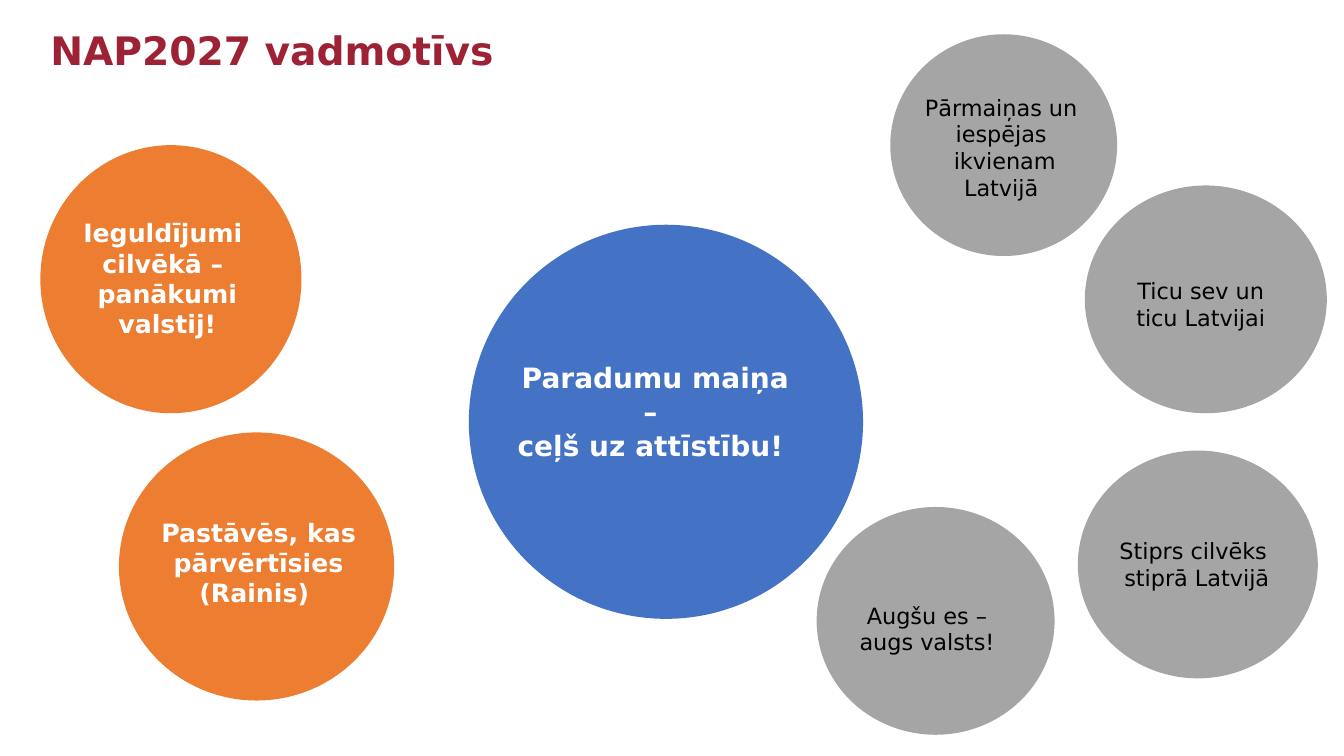
from pptx import Presentation
from pptx.dml.color import RGBColor
from pptx.enum.shapes import MSO_SHAPE
from pptx.enum.text import MSO_ANCHOR, PP_ALIGN
from pptx.util import Emu, Pt

PX = 9144
FONT = "DejaVu Sans"
COLORS = {
    "title": "9D2235",
    "blue": "4472C4",
    "orange": "ED7D31",
    "grey": "A5A5A5",
    "white": "FFFFFF",
    "black": "000000",
}
STYLES = {
    "blue": {"size": 20, "color": "white", "bold": True},
    "orange": {"size": 18, "color": "white", "bold": True},
    "grey": {"size": 16, "color": "black", "bold": False},
}
BUBBLES = [
    ("blue", (465, 223, 391, 391), (500, 353, 300, 145),
     ["Paradumu maiņa – ", "ceļš uz attīstību! "]),
    ("orange", (40, 144, 259, 266), (56, 211, 220, 131),
     ["Ieguldījumi ", "cilvēkā – ", "panākumi valstij!"]),
    ("orange", (118, 429, 273, 266), (132, 508, 249, 115),
     ["Pastāvēs, kas pārvērtīsies (Rainis) "]),
    ("grey", (1069, 447, 238, 226), (1076, 528, 222, 64),
     ["Stiprs cilvēks ", "stiprā Latvijā"]),
    ("grey", (810, 503, 236, 226), (821, 592, 204, 64),
     ["Augšu es – ", "augs valsts! "]),
    ("grey", (883, 34, 225, 220), (902, 88, 189, 118),
     ["Pārmaiņas un ", "iespējas ", "ikvienam Latvijā "]),
    ("grey", (1076, 184, 240, 226), (1091, 270, 207, 64),
     ["Ticu sev un ", "ticu Latvijai "]),
]


def px(*values):
    return [Emu(v * PX) for v in values]


def rgb(name):
    return RGBColor.from_string(COLORS[name])


def write(tf, lines, size, color, bold=False, align=PP_ALIGN.CENTER):
    tf.word_wrap = True
    tf.vertical_anchor = MSO_ANCHOR.TOP
    for i, line in enumerate(lines):
        p = tf.add_paragraph() if i else tf.paragraphs[0]
        p.alignment = align
        p.line_spacing = 1.0
        p.space_before = Pt(0)
        r = p.add_run()
        r.text = line
        r.font.name = FONT
        r.font.size = Pt(size)
        r.font.bold = bold
        r.font.color.rgb = rgb(color)


def add_title(s, text, box):
    sp = s.shapes.title
    sp.left, sp.top, sp.width, sp.height = px(*box)
    write(sp.text_frame, [text], size=28, color="title", bold=True,
          align=PP_ALIGN.LEFT)


def add_bubble(s, kind, circle, label, lines):
    group = s.shapes.add_group_shape()
    sp = group.shapes.add_shape(MSO_SHAPE.OVAL, *px(*circle))
    sp.shadow.inherit = False
    sp.fill.solid()
    sp.fill.fore_color.rgb = rgb(kind)
    sp.line.fill.background()
    box = group.shapes.add_textbox(*px(*label))
    write(box.text_frame, lines, **STYLES[kind])


def main():
    prs = Presentation()
    prs.slide_width, prs.slide_height = px(1333, 750)
    s = prs.slides.add_slide(prs.slide_layouts[5])
    add_title(s, "NAP2027 vadmotīvs", (40, 21, 796, 57))
    for bubble in BUBBLES:
        add_bubble(s, *bubble)
    prs.save("out.pptx")


if __name__ == "__main__":
    main()
